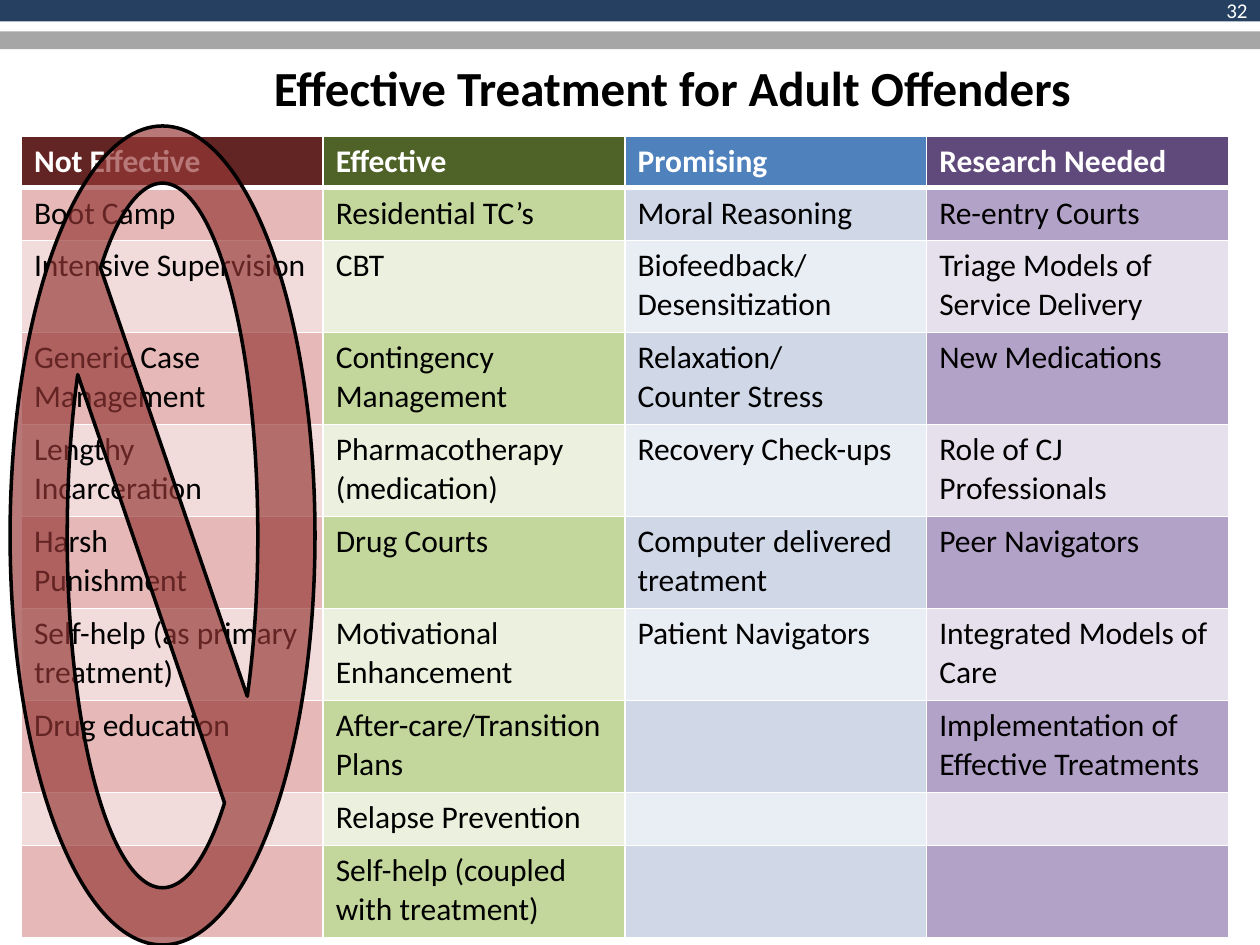
from lxml.etree import SubElement
from pptx import Presentation
from pptx.dml.color import RGBColor
from pptx.enum.shapes import MSO_SHAPE
from pptx.enum.text import MSO_ANCHOR, PP_ALIGN
from pptx.oxml.ns import qn
from pptx.util import Inches, Pt

COLORS = {
    "white": "FFFFFF", "black": "000000", "navy": "254061", "gray": "A6A6A6", "red": "953735",
}
COLUMNS = [
    ("632523", "E6B9B8", "F2DCDB"),
    ("4F6228", "C3D69B", "EBF1DE"),
    ("4F81BD", "D0D8E8", "E9EDF4"),
    ("604A7B", "B3A2C7", "E6E0EC"),
]
ROWS = [
    (0.41, ["Not Effective", "Effective", "Promising", "Research Needed"]),
    (0.42, ["Boot Camp", "Residential TC’s", "Moral Reasoning", "Re-entry Courts"]),
    (0.73, ["Intensive Supervision", "CBT", "Biofeedback/\nDesensitization",
            "Triage Models of Service Delivery"]),
    (0.73, ["Generic Case Management", "Contingency Management",
            "Relaxation/\nCounter Stress", "New Medications"]),
    (0.73, ["Lengthy\nIncarceration", "Pharmacotherapy (medication)",
            "Recovery Check-ups", "Role of CJ Professionals"]),
    (0.73, ["Harsh\nPunishment", "Drug Courts", "Computer delivered treatment",
            "Peer Navigators"]),
    (0.73, ["Self-help (as primary treatment)", "Motivational\nEnhancement",
            "Patient Navigators", "Integrated Models of Care"]),
    (0.73, ["Drug education", "After-care/Transition Plans", "",
            "Implementation of Effective Treatments"]),
    (0.42, ["", "Relapse Prevention", "", ""]),
    (0.73, ["", "Self-help (coupled with treatment)", "", ""]),
]


def style_font(para, size, color, bold=False):
    para.font.name = "Calibri"
    para.font.size = Pt(size)
    para.font.bold = bold
    para.font.color.rgb = RGBColor.from_string(COLORS[color])


def add_filled(kind, left, top, width, height, color):
    shape = page.shapes.add_shape(
        kind, Inches(left), Inches(top), Inches(width), Inches(height))
    shape.shadow.inherit = False
    shape.fill.solid()
    shape.fill.fore_color.rgb = RGBColor.from_string(COLORS[color])
    shape.line.fill.background()
    return shape


deck = Presentation()
deck.slide_width, deck.slide_height = Inches(10), Inches(7.5)
page = deck.slides.add_slide(deck.slide_layouts[6])

add_filled(MSO_SHAPE.RECTANGLE, 0, 0, 10, 0.17, "navy")
add_filled(MSO_SHAPE.RECTANGLE, 0, 0.25, 10, 0.14, "gray")

title = page.shapes.add_textbox(Inches(0), Inches(0.41), Inches(9.75), Inches(0.59))
title.text_frame.word_wrap = True
para = title.text_frame.paragraphs[0]
para.text = "Effective Treatment for Adult Offenders"
para.alignment = PP_ALIGN.CENTER
para._p.get_or_add_pPr().set("marL", str(Inches(0.92)))
style_font(para, 28, "black", True)

table = page.shapes.add_table(
    len(ROWS), len(COLUMNS), Inches(0.17), Inches(1.08), Inches(9.58), Inches(6.33)).table
for row_index, (height, texts) in enumerate(ROWS):
    table.rows[row_index].height = Inches(height)
    header = row_index == 0
    shade = 0 if header else 2 - row_index % 2
    for column_index, text in enumerate(texts):
        cell = table.cell(row_index, column_index)
        cell.text = text
        for para in cell.text_frame.paragraphs:
            style_font(para, 18, "white" if header else "black", header)
        properties = cell._tc.get_or_add_tcPr()
        for side in ("lnL", "lnR", "lnT", "lnB"):
            thick = (side == "lnB" and header) or (side == "lnT" and row_index == 1)
            border = SubElement(properties, qn(f"a:{side}"), w=str(Pt(3 if thick else 1)))
            border_fill = SubElement(border, qn("a:solidFill"))
            SubElement(border_fill, qn("a:srgbClr"), val=COLORS["white"])
        cell.fill.solid()
        cell.fill.fore_color.rgb = RGBColor.from_string(COLUMNS[column_index][shade])

number = page.shapes.add_textbox(Inches(7.67), Inches(-0.12), Inches(2.33), Inches(0.4))
number.text_frame.word_wrap = True
number.text_frame.vertical_anchor = MSO_ANCHOR.MIDDLE
para = number.text_frame.paragraphs[0]
para.text = "32"
para.alignment = PP_ALIGN.RIGHT
style_font(para, 12, "white")

prohibition = add_filled(MSO_SHAPE.NO_SYMBOL, 0.08, 1, 2.42, 6.5, "red")
prohibition.line.color.rgb = RGBColor.from_string(COLORS["black"])
prohibition.line.width = Pt(2)
fill_color = prohibition._element.spPr.find(qn("a:solidFill")).find(qn("a:srgbClr"))
SubElement(fill_color, qn("a:alpha"), val="67000")

deck.save("out.pptx")
